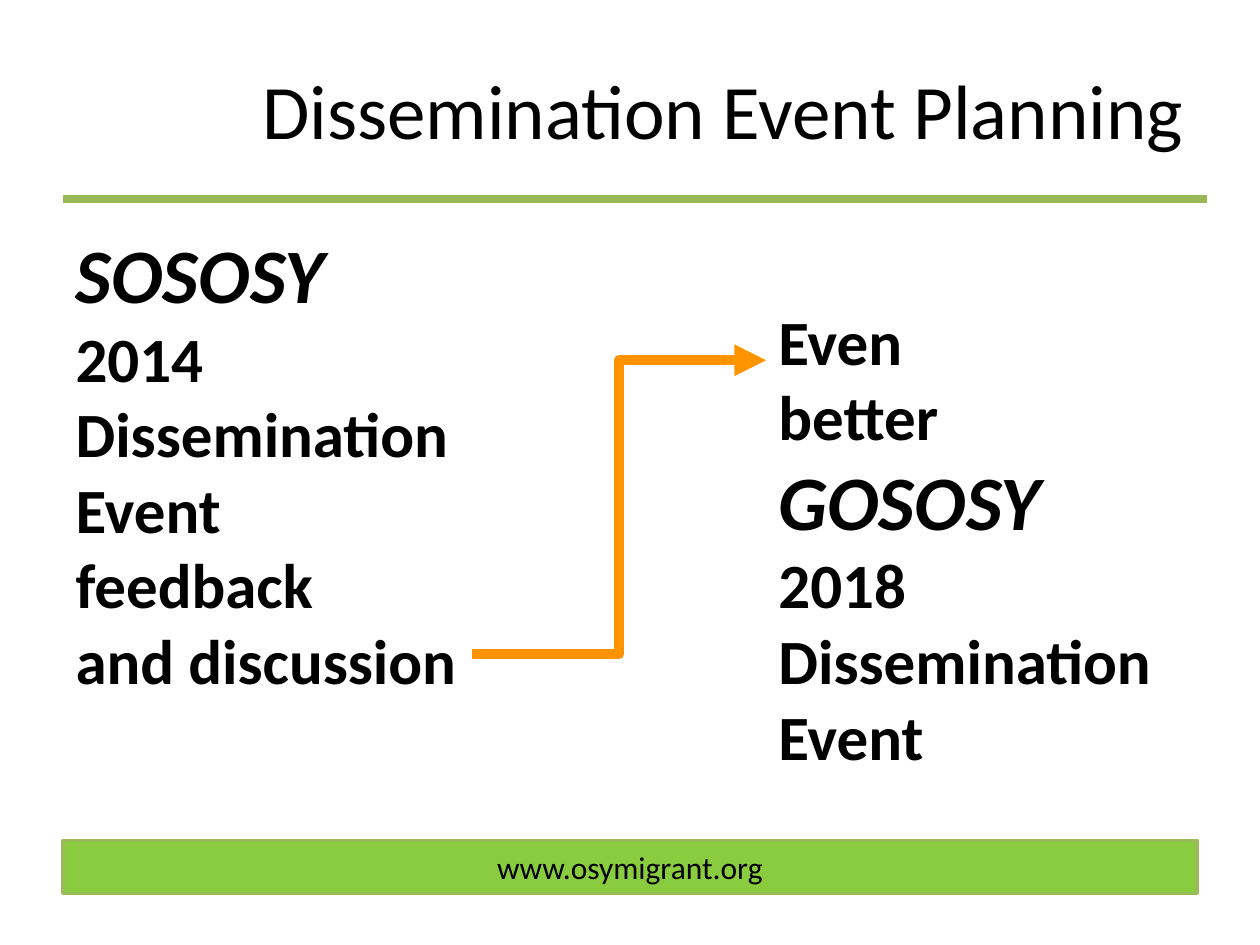
from pptx import Presentation
from pptx.dml.color import RGBColor
from pptx.enum.shapes import MSO_CONNECTOR, MSO_SHAPE
from pptx.enum.text import MSO_ANCHOR, MSO_AUTO_SIZE, PP_ALIGN
from pptx.oxml.ns import qn
from pptx.util import Inches, Pt
from lxml.etree import SubElement

BLACK = RGBColor(0x00, 0x00, 0x00)
RULE_GREEN = RGBColor(0x98, 0xB9, 0x55)
BAR_GREEN = RGBColor(0x89, 0xCC, 0x40)
BAR_EDGE = RGBColor(0x9B, 0xBB, 0x59)
ORANGE = RGBColor(0xFF, 0x93, 0x00)
FONT = "Calibri"

SOURCE_EVENT = ["SOSOSY", "2014", "Dissemination", "Event", "feedback", "and discussion"]
NEXT_EVENT = ["Even", "better", "GOSOSY", "2018", "Dissemination Event"]
PROJECTS = ("SOSOSY", "GOSOSY")


def place(sp, left, top, width, height):
    """Move and size a shape, in inches."""
    sp.left, sp.top = Inches(left), Inches(top)
    sp.width, sp.height = Inches(width), Inches(height)


def add_run(p, text, size, bold=False, italic=False):
    """Add one black run to a paragraph."""
    r = p.add_run()
    r.text = text
    r.font.name, r.font.size = FONT, Pt(size)
    r.font.bold, r.font.italic = bold, italic
    r.font.color.rgb = BLACK


def fill_lines(tf, lines):
    """Write bold unbulleted lines, with project names larger and italic."""
    tf.word_wrap = True
    tf.auto_size = MSO_AUTO_SIZE.NONE
    for i, text in enumerate(lines):
        p = tf.paragraphs[0] if i == 0 else tf.add_paragraph()
        p.space_before = Pt(0)
        pPr = p._p.get_or_add_pPr()
        pPr.set("marL", "0")
        pPr.set("indent", "0")
        SubElement(pPr, qn("a:buNone"))
        project = text in PROJECTS
        add_run(p, text, 44 if project else 36, bold=True, italic=project)


def add_line(s, kind, start, end, color, width, arrow=False):
    """Add a connector, optionally with a triangle at its end."""
    cx = s.shapes.add_connector(kind, *map(Inches, start + end))
    cx.line.color.rgb = color
    cx.line.width = Pt(width)
    if arrow:
        SubElement(cx.line._get_or_add_ln(), qn("a:tailEnd"), type="triangle")
    SubElement(cx._element.spPr, qn("a:effectLst"))


def add_footer(s, text):
    """Add the green bar with the web address."""
    sp = s.shapes.add_shape(MSO_SHAPE.RECTANGLE, Inches(0.5), Inches(6.67), Inches(9), Inches(0.42))
    sp.shadow.inherit = False
    sp.fill.solid()
    sp.fill.fore_color.rgb = BAR_GREEN
    sp.line.color.rgb = BAR_EDGE
    sp.line.width = Pt(2)
    p = sp.text_frame.paragraphs[0]
    p.alignment = PP_ALIGN.CENTER
    add_run(p, text, 18)


def main():
    """Build the slide and save it."""
    prs = Presentation()
    prs.slide_width, prs.slide_height = Inches(10), Inches(7.5)
    s = prs.slides.add_slide(prs.slide_layouts[1])

    title, body = s.placeholders
    place(title, 0.5, 0.3, 9, 1.12)
    title.text_frame.vertical_anchor = MSO_ANCHOR.MIDDLE
    p = title.text_frame.paragraphs[0]
    p.alignment = PP_ALIGN.RIGHT
    add_run(p, "Dissemination Event Planning", 44)

    place(body, 0.5, 1.75, 5.58, 4.31)
    fill_lines(body.text_frame, SOURCE_EVENT)

    add_line(s, MSO_CONNECTOR.STRAIGHT, (0.5, 1.58), (9.58, 1.58), RULE_GREEN, 4.5)
    add_footer(s, "www.osymigrant.org")
    add_line(s, MSO_CONNECTOR.ELBOW, (3.75, 5.19), (6.08, 2.86), ORANGE, 6, arrow=True)

    box = s.shapes.add_textbox(Inches(6.08), Inches(2.35), Inches(3.83), Inches(4.48))
    fill_lines(box.text_frame, NEXT_EVENT)

    prs.save("out.pptx")


if __name__ == "__main__":
    main()
